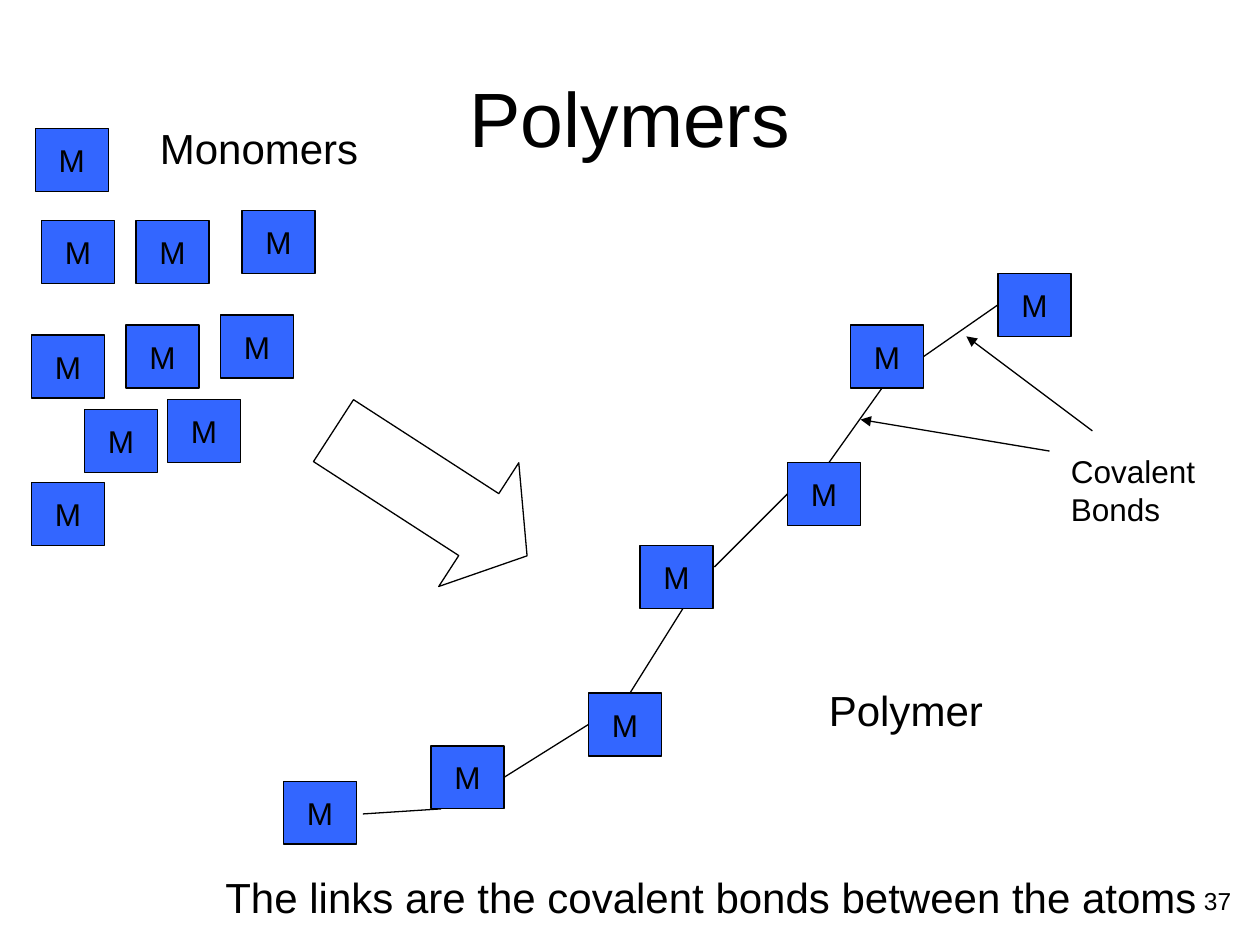
from lxml import etree
from pptx import Presentation
from pptx.dml.color import RGBColor
from pptx.enum import shapes, text
from pptx.oxml.ns import qn
from pptx.util import Inches, Pt

BLACK = RGBColor(0x00, 0x00, 0x00)
WHITE = RGBColor(0xFF, 0xFF, 0xFF)
BLUE = RGBColor(0x33, 0x66, 0xFF)
LEFT, CENTER, RIGHT = text.PP_ALIGN.LEFT, text.PP_ALIGN.CENTER, text.PP_ALIGN.RIGHT
TOP, MIDDLE = text.MSO_ANCHOR.TOP, text.MSO_ANCHOR.MIDDLE

presentation = Presentation()
presentation.slide_width = Inches(10)
presentation.slide_height = Inches(7.5)
slide = presentation.slides.add_slide(presentation.slide_layouts[6])


def write(shape, lines, size, alignment, anchor, wrap, spacing=None):
    frame = shape.text_frame
    frame.word_wrap = wrap
    frame.vertical_anchor = anchor
    for index, line in enumerate(lines):
        paragraph = frame.add_paragraph() if index else frame.paragraphs[0]
        paragraph.alignment = alignment
        paragraph.line_spacing = spacing
        run = paragraph.add_run()
        run.text = line
        run.font.size = Pt(size)
        run.font.name = "Arial"
        run.font.color.rgb = BLACK


def add_outlined(kind, left, top, width, height, fill):
    shape = slide.shapes.add_shape(
        kind, Inches(left), Inches(top), Inches(width), Inches(height))
    shape.shadow.inherit = False
    shape.fill.solid()
    shape.fill.fore_color.rgb = fill
    shape.line.color.rgb = BLACK
    shape.line.width = Pt(0.75)
    return shape


loose_monomers = [
    (0.67, 3.25), (1.33, 3.17), (1.08, 1.75), (1.75, 2.5), (0.33, 1.75),
    (0.25, 2.66), (0.25, 3.83), (1.92, 1.67), (0.28, 1.02), (1, 2.58),
]
chain_monomers = [
    (2.25, 6.2), (3.42, 5.92), (4.67, 5.5), (5.08, 4.33),
    (6.25, 3.67), (6.75, 2.58), (7.92, 2.17),
]
monomers = []
for left, top in loose_monomers + chain_monomers:
    monomer = add_outlined(shapes.MSO_SHAPE.RECTANGLE, left, top, 0.58, 0.5, BLUE)
    write(monomer, ["M"], 18, CENTER, MIDDLE, False)
    monomers.append(monomer)
chain = monomers[len(loose_monomers):]

arrow = add_outlined(shapes.MSO_SHAPE.RIGHT_ARROW, 2.5, 3.33, 1.83, 1.17, WHITE)
arrow.adjustments[0] = 0.5
arrow.adjustments[1] = 0.39
arrow.rotation = 32.9

lines = [
    (2.88, 6.46, 3.5, 6.42, None, None, False),
    (4, 6.17, 4.67, 5.75, chain[1], chain[2], False),
    (5, 5.5, 5.42, 4.83, None, None, False),
    (5.67, 4.5, 6.25, 3.92, None, chain[4], False),
    (6.58, 3.67, 7, 3.08, None, None, False),
    (7.33, 2.83, 7.92, 2.42, chain[5], chain[6], False),
    (8.33, 3.58, 6.83, 3.33, None, None, True),
    (8.67, 3.42, 7.67, 2.67, None, None, True),
]
for x1, y1, x2, y2, start, end, pointed in lines:
    connector = slide.shapes.add_connector(
        shapes.MSO_CONNECTOR.STRAIGHT, Inches(x1), Inches(y1), Inches(x2), Inches(y2))
    if start is not None:
        connector.begin_connect(start, 3)
    if end is not None:
        connector.end_connect(end, 1)
    connector.line.color.rgb = BLACK
    connector.line.width = Pt(0.75)
    if pointed:
        etree.SubElement(connector.line._get_or_add_ln(), qn("a:tailEnd"), type="triangle")
    etree.SubElement(connector._element.spPr, qn("a:effectLst"))

labels = [
    (0.5, 0.3, 9, 1.25, ["Polymers"], 44, CENTER, MIDDLE, True, None),
    (1.17, 0.92, 2, 0.5, ["Monomers"], 24, LEFT, TOP, True, None),
    (6.48, 5.38, 1.43, 0.5, ["Polymer"], 24, LEFT, TOP, False, None),
    (8.4, 3.54, 1.19, 0.7, ["Covalent", "Bonds"], 18, LEFT, TOP, False, None),
    (9.38, 6.98, 0.49, 0.36, ["37"], 14, RIGHT, TOP, True, None),
    (1.69, 6.91, 8.31, 0.47, ["The links are the covalent bonds between the atoms"],
     24, LEFT, TOP, True, 0.9),
]
for left, top, width, height, *content in labels:
    label = slide.shapes.add_textbox(
        Inches(left), Inches(top), Inches(width), Inches(height))
    write(label, *content)

presentation.save("out.pptx")
